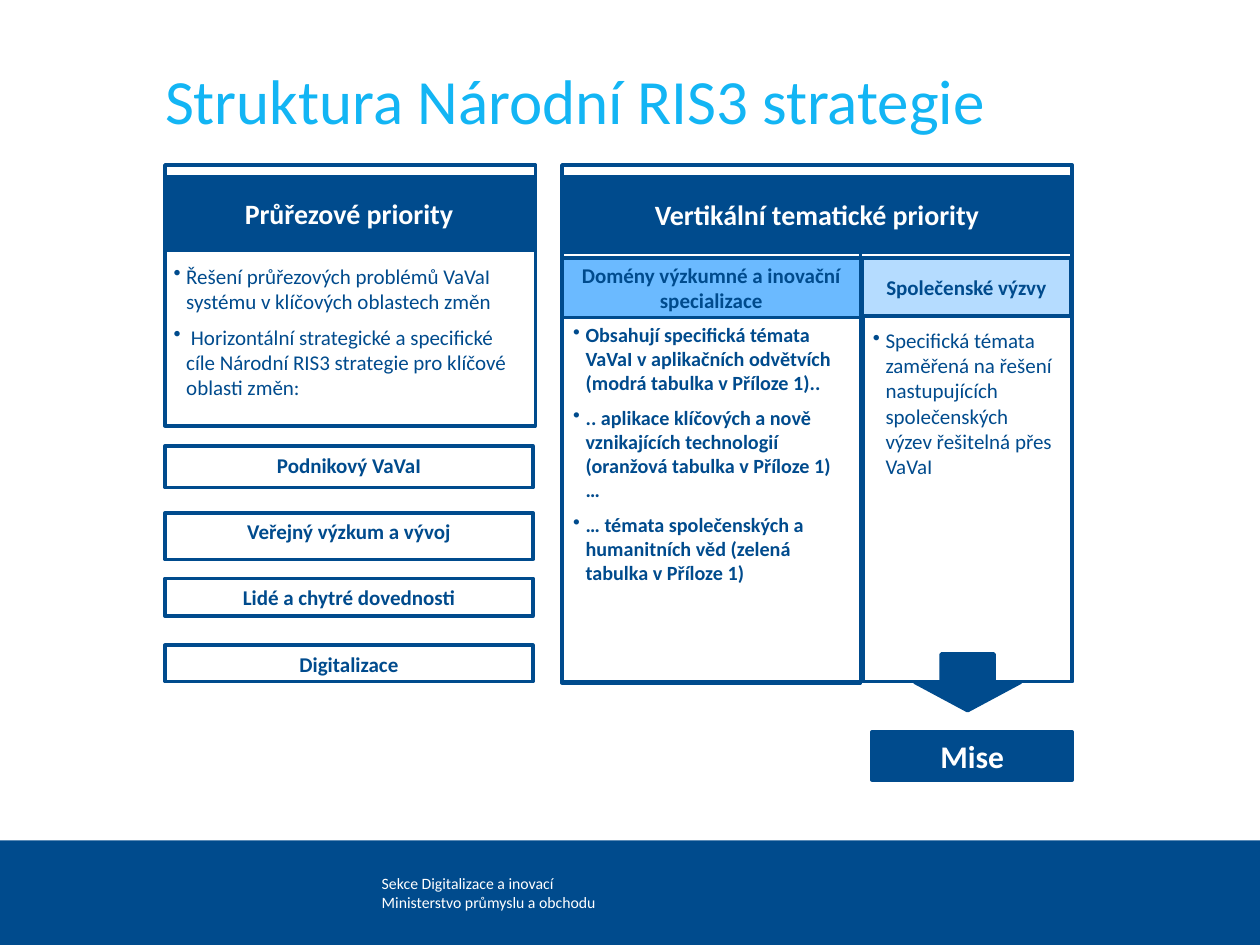
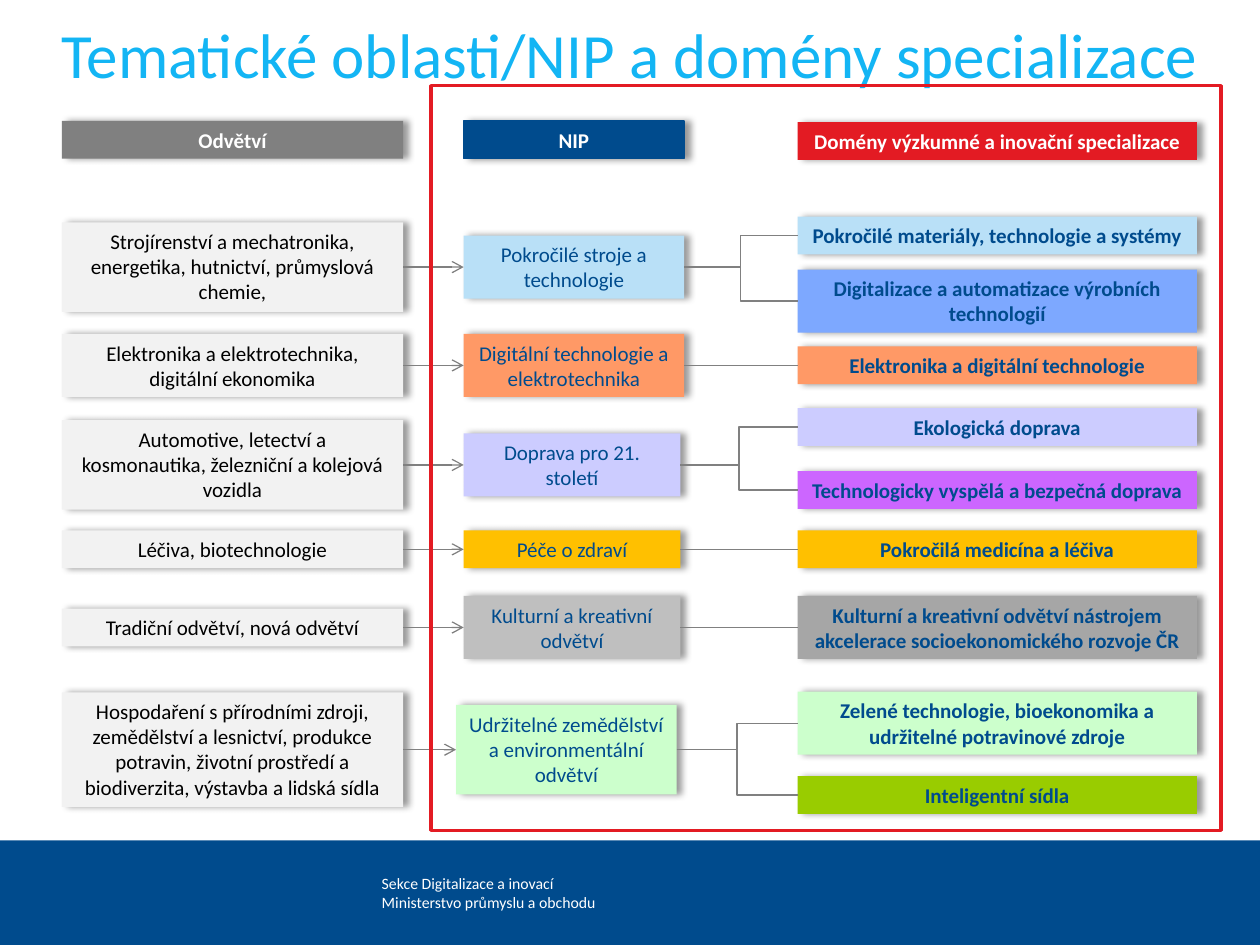
from lxml import etree
from pptx import Presentation
from pptx.dml.color import RGBColor
from pptx.enum.shapes import MSO_CONNECTOR, MSO_SHAPE
from pptx.enum.text import MSO_ANCHOR, PP_ALIGN
from pptx.oxml.ns import qn
from pptx.util import Inches, Pt

RECT, ARROW = MSO_SHAPE.RECTANGLE, MSO_SHAPE.DOWN_ARROW
LINE, ELBOW = MSO_CONNECTOR.STRAIGHT, MSO_CONNECTOR.ELBOW
TOP, MID = MSO_ANCHOR.TOP, MSO_ANCHOR.MIDDLE
LEFT, CENTER = PP_ALIGN.LEFT, PP_ALIGN.CENTER
FONT = "Calibri"
HEX = {
    "navy": "004B8D", "cyan": "13B5F4", "white": "FFFFFF", "black": "000000",
    "red": "E31B23", "gray": "808080", "pale": "F2F2F2",
    "azure": "6BBAFF", "ice": "B5DCFF", "sky": "B9E0F7", "blue": "7DA8FF",
    "orange": "FF9966", "lilac": "CCCCFF", "purple": "CC66FF",
    "gold": "FFC000", "silver": "BFBFBF", "steel": "A6A6A6",
    "mint": "CCFFCC", "lime": "99CC00",
}
# Box height for a number of text lines
TALL = {1: 0.3, 2: 0.5, 3: 0.71, 4: 0.91}

# Columns of the theme map: left, width
FIELD, NIP, DOMAIN = (0.49, 2.71), (3.68, 1.75), (6.33, 3.17)

# Rows: middle, field (text, lines), NIP (text, lines, fill, left, width),
# domains (top, text, lines, fill)
ROWS = [
    (2.12, ("Strojírenství a mechatronika, energetika, hutnictví, průmyslová chemie,", 3),
     ("Pokročilé stroje a technologie", 2, "sky", 3.68, 1.75),
     [(1.72, "Pokročilé materiály, technologie a systémy", 1, "sky"),
      (2.14, "Digitalizace a automatizace výrobních technologií", 2, "blue")]),
    (2.9, ("Elektronika a elektrotechnika, digitální ekonomika", 2),
     ("Digitální technologie a elektrotechnika", 2, "orange", 3.68, 1.75),
     [(2.75, "Elektronika a digitální technologie", 1, "orange")]),
    (3.69, ("Automotive, letectví a kosmonautika, železniční a kolejová vozidla", 3),
     ("Doprava pro 21. století", 2, "lilac", 3.68, 1.72),
     [(3.24, "Ekologická doprava", 1, "lilac"),
      (3.74, "Technologicky vyspělá a bezpečná doprava", 1, "purple")]),
    (4.36, ("Léčiva, biotechnologie", 1),
     ("Péče o zdraví", 1, "gold", 3.68, 1.72),
     [(4.21, "Pokročilá medicína a léčiva", 1, "gold")]),
    (4.98, ("Tradiční odvětví, nová odvětví", 1),
     ("Kulturní a kreativní odvětví", 2, "silver", 3.68, 1.72),
     [(4.73, "Kulturní a kreativní odvětví nástrojem akcelerace "
       "socioekonomického rozvoje ČR", 2, "steel")]),
    (5.95, ("Hospodaření s přírodními zdroji, zemědělství a lesnictví, produkce potravin, "
            "životní prostředí a biodiverzita, výstavba a lidská sídla", 4),
     ("Udržitelné zemědělství a environmentální odvětví", 3, "mint", 3.62, 1.75),
     [(5.49, "Zelené technologie, bioekonomika a udržitelné potravinové zdroje", 2, "mint"),
      (6.16, "Inteligentní sídla", 1, "lime")]),
]


def rgb(name):
    return RGBColor.from_string(HEX[name])


def write(shape, lines, size=12, color="navy", bold=False, align=LEFT,
          anchor=TOP, bullet=False, after=0, inset=True):
    frame = shape.text_frame
    frame.word_wrap = True
    frame.vertical_anchor = anchor
    if not inset:
        frame.margin_left = frame.margin_right = 0
        frame.margin_top = frame.margin_bottom = 0
    frame.text = "\n".join(lines)
    for para in frame.paragraphs:
        if bullet:
            props = para._p.get_or_add_pPr()
            props.set("marL", str(Inches(0.1)))
            props.set("indent", str(Inches(-0.1)))
            etree.SubElement(props, qn("a:buChar")).set("char", "•")
        para.alignment = align
        para.space_after = Pt(after)
        for run in para.runs:
            run.font.name = FONT
            run.font.size = Pt(size)
            run.font.bold = bold
            run.font.color.rgb = rgb(color)


def text(slide, at, lines, **style):
    write(slide.shapes.add_textbox(*map(Inches, at)), lines, **style)


def box(slide, at, fill=None, line=None, width=2, kind=RECT, words=None, **style):
    shape = slide.shapes.add_shape(kind, *map(Inches, at))
    shape.shadow.inherit = False
    if fill:
        shape.fill.solid()
        shape.fill.fore_color.rgb = rgb(fill)
    else:
        shape.fill.background()
    if line:
        shape.line.color.rgb = rgb(line)
        shape.line.width = Pt(width)
    else:
        shape.line.fill.background()
    if words:
        write(shape, [words], align=CENTER, **style)
    return shape


def card(slide, at, words, fill, line=None, **style):
    """Box with a soft shadow to the right."""
    shape = box(slide, at, fill, line, 0.75, words=words, **style)
    effects = shape._element.spPr.find(qn("a:effectLst"))
    shade = etree.SubElement(effects, qn("a:outerShdw"), blurRad=str(Pt(4)),
                             dist=str(Pt(3)), dir="0", algn="l", rotWithShape="0")
    tint = etree.SubElement(shade, qn("a:srgbClr"), val=HEX["black"])
    etree.SubElement(tint, qn("a:alpha"), val="40000")
    return shape


def link(slide, start, end, kind=LINE, arrow=False):
    """Join the right side of one box to the left side of the next."""
    wire = slide.shapes.add_connector(kind, 0, 0, 0, 0)
    wire.begin_connect(start, 3)
    wire.end_connect(end, 1)
    wire.line.color.rgb = rgb("gray")
    wire.line.width = Pt(0.75)
    if arrow:
        etree.SubElement(wire.line._get_or_add_ln(), qn("a:tailEnd"), type="arrow")
    etree.SubElement(wire._element.spPr, qn("a:effectLst"))


def page(deck, title, at):
    """Slide with the navy footer band and a title."""
    slide = deck.slides.add_slide(deck.slide_layouts[6])
    slide.background.fill.solid()
    slide.background.fill.fore_color.rgb = rgb("navy")
    box(slide, (0, 0, 10, 6.67), "white")
    text(slide, (3.03, 6.67, 1.97, 0.83),
         ["Sekce Digitalizace a inovací", "Ministerstvo průmyslu a obchodu"],
         size=9, color="white", anchor=MID, inset=False)
    text(slide, at, [title], size=36, color="cyan", inset=False)
    return slide


def outline(deck):
    slide = page(deck, "Struktura Národní RIS3 strategie", (1.31, 0.49, 8.19, 0.61))

    # Frames of both halves and of the two inner columns
    for at in [(1.31, 1.31, 2.94, 2.07), (4.46, 1.31, 4.05, 4.1),
               (4.46, 1.99, 2.37, 3.43), (6.85, 2.31, 1.66, 3.1)]:
        box(slide, at, line="navy")

    # Headings
    for at, fill, color, size, words in [
        ((1.31, 1.4, 2.92, 0.59), "navy", "white", 16, "Průřezové priority"),
        ((4.48, 1.4, 4.01, 0.6), "navy", "white", 16, "Vertikální tematické priority"),
        ((4.46, 2.05, 2.37, 0.47), "azure", "navy", 12,
         "Domény výzkumné a inovační specializace"),
        ((6.84, 2.05, 1.66, 0.46), "ice", "navy", 12, "Společenské výzvy"),
        ((6.92, 5.81, 1.59, 0.38), "navy", "white", 18, "Mise"),
    ]:
        box(slide, at, fill, "navy", words=words, size=size, color=color,
            bold=True, anchor=MID)

    # Bullet lists
    text(slide, (1.28, 2.04, 2.94, 1.19), [
        "Řešení průřezových problémů VaVaI systému v klíčových oblastech změn",
        " Horizontální strategické a specifické cíle Národní RIS3 strategie "
        "pro klíčové oblasti změn:",
    ], bullet=True, after=6)
    text(slide, (4.45, 2.51, 2.37, 2.2), [
        "Obsahují specifická témata VaVaI v aplikačních odvětvích "
        "(modrá tabulka v Příloze 1)..",
        ".. aplikace klíčových a nově vznikajících technologií "
        "(oranžová tabulka v Příloze 1) …",
        "… témata společenských a humanitních věd (zelená tabulka v Příloze 1)",
    ], size=11.5, bold=True, bullet=True, after=6)
    text(slide, (6.83, 2.55, 1.63, 1.31), [
        "Specifická témata zaměřená na řešení nastupujících společenských "
        "výzev řešitelná přes VaVaI",
    ], bullet=True)

    # Key areas of change
    for top, height, words in [
        (3.54, 0.33, "Podnikový VaVaI"), (4.07, 0.37, "Veřejný výzkum a vývoj"),
        (4.59, 0.3, "Lidé a chytré dovednosti"), (5.12, 0.29, "Digitalizace"),
    ]:
        box(slide, (1.31, top, 2.92, height), line="navy", words=words, bold=True)

    box(slide, (7.26, 5.19, 0.84, 0.45), "navy", "navy", kind=ARROW)


def themes(deck):
    slide = page(deck, "Tematické oblasti/NIP a domény specializace",
                 (0.49, 0.12, 9.3, 1.21))

    # Column heads
    for (left, width), top, words, fill, line in [
        (FIELD, 0.96, "Odvětví", "gray", None),
        (NIP, 0.96, "NIP", "navy", "navy"),
        (DOMAIN, 0.97, "Domény výzkumné a inovační specializace", "red", None),
    ]:
        card(slide, (left, top, width, TALL[1]), words, fill, line,
             color="white", bold=True)

    # Rows from field through NIP to domains
    for mid, (words, count), (name, rows, fill, left, width), domains in ROWS:
        high, tall = TALL[count], TALL[rows]
        field = card(slide, (FIELD[0], mid - high / 2, FIELD[1], high), words,
                     "pale", color="black")
        nip = card(slide, (left, mid - tall / 2, width, tall), name, fill)
        link(slide, field, nip, arrow=True)
        kind = ELBOW if len(domains) > 1 else LINE
        for top, label, lines, tone in domains:
            goal = card(slide, (DOMAIN[0], top, DOMAIN[1], TALL[lines]), label,
                        tone, bold=True)
            link(slide, nip, goal, kind)

    # Red frame around NIP and domains
    box(slide, (3.42, 0.68, 6.27, 5.91), line="red")


def main():
    deck = Presentation()
    deck.slide_width, deck.slide_height = Inches(10), Inches(7.5)
    outline(deck)
    themes(deck)
    deck.save("out.pptx")


if __name__ == "__main__":
    main()
